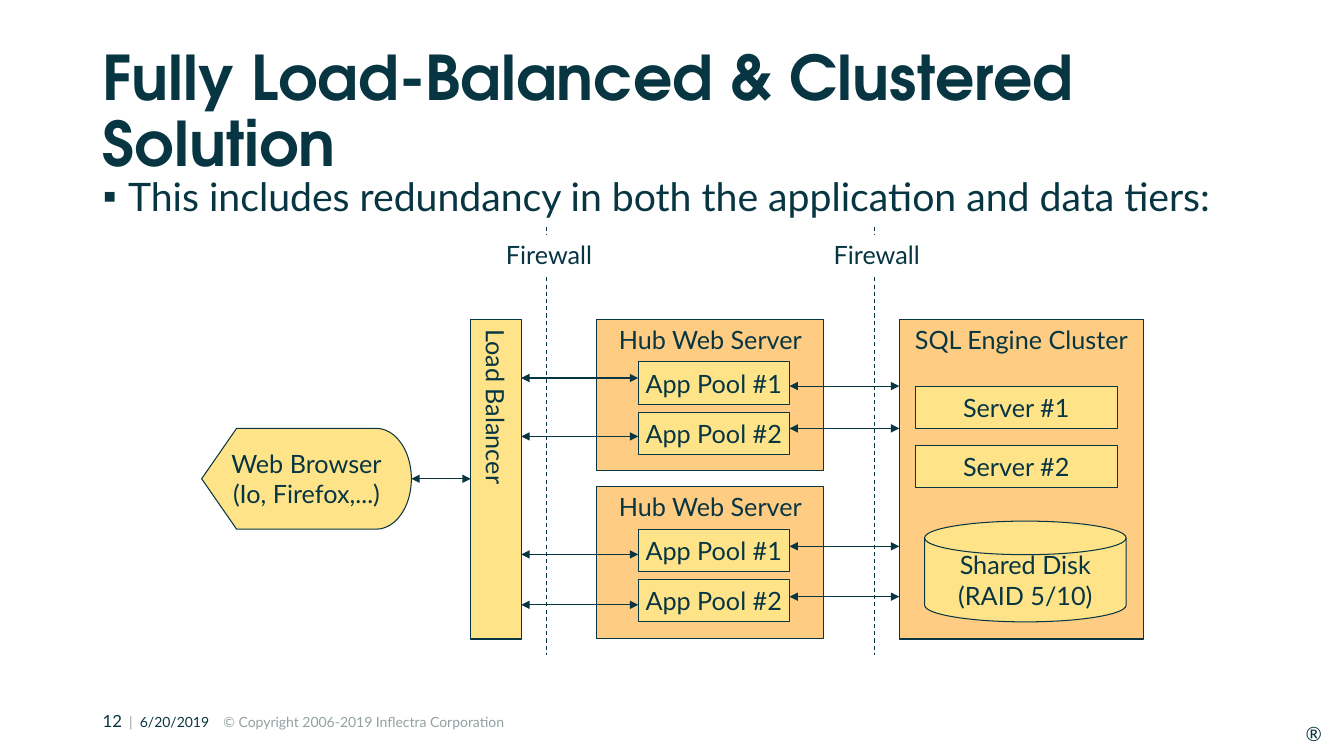
from pptx import Presentation
from pptx.dml.color import RGBColor
from pptx.enum.dml import MSO_LINE
from pptx.enum.shapes import MSO_CONNECTOR as Conn, MSO_SHAPE as Kind
from pptx.enum.text import MSO_ANCHOR as Anchor, MSO_AUTO_SIZE as Auto, PP_ALIGN as Align
from pptx.oxml.ns import qn
from pptx.util import Inches, Pt
from lxml.etree import SubElement

INK, GRAY, WHITE = "073642", "93A1A1", "FFFFFF"
ORANGE, YELLOW = "FECC82", "FFE389"
BODY, HEAD = "Lato", "TeX Gyre Adventor"


def color(code):
    return RGBColor.from_string(code)


def apply(item, **values):
    for name, value in values.items():
        setattr(item, name, value)


def write(par, text, size, tint=INK, face=BODY, bold=False):
    run = par.add_run()
    run.text = text
    apply(run.font, size=Pt(size), name=face, bold=bold)
    run.font.color.rgb = color(tint)


def place(item, x, y, w, h):
    apply(item, left=Inches(x), top=Inches(y), width=Inches(w), height=Inches(h))


def add_box(slide, kind, x, y, w, h, text, fill=YELLOW, line=INK,
            anchor=Anchor.MIDDLE, align=Align.CENTER, wrap=False):
    box = slide.shapes.add_shape(kind, *map(Inches, (x, y, w, h)))
    box.shadow.inherit = False
    box.fill.solid()
    box.fill.fore_color.rgb = color(fill)
    if line:
        box.line.color.rgb = color(line)
        box.line.width = Pt(0.75)
    else:
        box.line.fill.background()
    frame = box.text_frame
    apply(frame, word_wrap=wrap, vertical_anchor=anchor)
    for i, row in enumerate(text.split("\n")):
        par = frame.add_paragraph() if i else frame.paragraphs[0]
        par.alignment = align
        write(par, row, 18)
    return box


def add_line(slide, x1, y1, x2, y2, dash=False):
    line = slide.shapes.add_connector(Conn.STRAIGHT, *map(Inches, (x1, y1, x2, y2)))
    line.line.color.rgb = color(INK)
    line.line.width = Pt(0.75)
    props = line.element.spPr
    if dash:
        line.line.dash_style = MSO_LINE.DASH
    else:
        for end in ("a:headEnd", "a:tailEnd"):
            SubElement(props.find(qn("a:ln")), qn(end), type="triangle")
    SubElement(props, qn("a:effectLst"))


def add_note(slide, x, y, w, h, parts, pad=None):
    box = slide.shapes.add_textbox(*map(Inches, (x, y, w, h)))
    frame = box.text_frame
    frame.word_wrap = True
    if pad is not None:
        apply(frame, margin_left=pad, margin_right=pad, margin_top=pad, margin_bottom=pad)
    for text, size, tint in parts:
        write(frame.paragraphs[0], text, size, tint)


def add_title(slide, text):
    title = slide.shapes.title
    place(title, 0.92, 0.4, 11.5, 1.45)
    apply(title.text_frame, auto_size=Auto.NONE, vertical_anchor=Anchor.MIDDLE, word_wrap=True)
    par = title.text_frame.paragraphs[0]
    apply(par, alignment=Align.LEFT, line_spacing=0.9)
    write(par, text, 44, face=HEAD, bold=True)


def add_list(slide, text):
    body = slide.placeholders[1]
    place(body, 0.92, 1.71, 11.5, 5.05)
    apply(body.text_frame, auto_size=Auto.NONE, vertical_anchor=Anchor.TOP, word_wrap=True)
    par = body.text_frame.paragraphs[0]
    props = par._p.get_or_add_pPr()
    props.set("marL", str(Inches(0.25)))
    props.set("indent", str(-Inches(0.25)))
    SubElement(props, qn("a:buChar"), char="▪")
    apply(par, line_spacing=0.9, space_before=Pt(0))
    write(par, text, 28)


def add_web(slide, top):
    add_box(slide, Kind.FLOWCHART_PROCESS, 5.92, top, 2.25, 1.5,
            "Hub Web Server", ORANGE, anchor=Anchor.TOP)
    for i in range(2):
        add_box(slide, Kind.RECTANGLE, 6.33, top + 0.42 + i * 0.5, 1.5, 0.42,
                f"App Pool #{i + 1}")


def add_wall(slide, x):
    add_line(slide, x, 2.25, x, 6.5, dash=True)
    add_box(slide, Kind.RECTANGLE, x - 0.5, 2.33, 1.42, 0.4, "Firewall",
            WHITE, None, Anchor.TOP, Align.LEFT, True)


def main():
    deck = Presentation()
    apply(deck, slide_width=Inches(13.33), slide_height=Inches(7.5))
    slide = deck.slides.add_slide(deck.slide_layouts[1])

    # Heading and footer
    add_title(slide, "Fully Load-Balanced & Clustered Solution")
    add_list(slide, "This includes redundancy in both the application and data tiers:")
    add_note(slide, 0.92, 7, 7.47, 0.3, [
        ("12", 12, INK), ("  |  ", 10, GRAY), ("6/20/2019  ", 10, INK),
        ("  © Copyright 2006-2019 Inflectra Corporation", 10, GRAY)])
    add_note(slide, 12.95, 7.16, 0.18, 0.24, [("®", 14, INK)], pad=0)

    # Data tier
    add_box(slide, Kind.RECTANGLE, 8.92, 3.17, 2.42, 3.17,
            "SQL Engine Cluster", ORANGE, anchor=Anchor.TOP)
    for i in range(2):
        add_box(slide, Kind.RECTANGLE, 9.08, 3.83 + i * 0.59, 2, 0.42, f"Server #{i + 1}")
    add_box(slide, Kind.FLOWCHART_MAGNETIC_DISK, 9.17, 5.17, 2, 1,
            "Shared Disk\n(RAID 5/10)")

    # Web tier and firewalls
    for top in (3.17, 4.83):
        add_web(slide, top)
    for x in (5.42, 8.67):
        add_wall(slide, x)

    # Client and balancer
    add_box(slide, Kind.FLOWCHART_DISPLAY, 2, 4.25, 2.08, 1,
            "Web Browser\n(Io, Firefox,...)")
    tower = add_box(slide, Kind.RECTANGLE, 4.67, 3.17, 0.5, 3.17, "Load Balancer")
    tower.element.txBody.bodyPr.set("vert", "eaVert")

    # Traffic arrows
    for x1, x2, rows in ((4.08, 4.67, (4.75,)),
                         (5.17, 6.33, (3.75, 4.33, 5.5, 6)),
                         (7.83, 8.92, (3.83, 4.25, 5.42, 5.92))):
        for y in rows:
            add_line(slide, x1, y, x2, y)

    deck.save("out.pptx")


if __name__ == "__main__":
    main()
